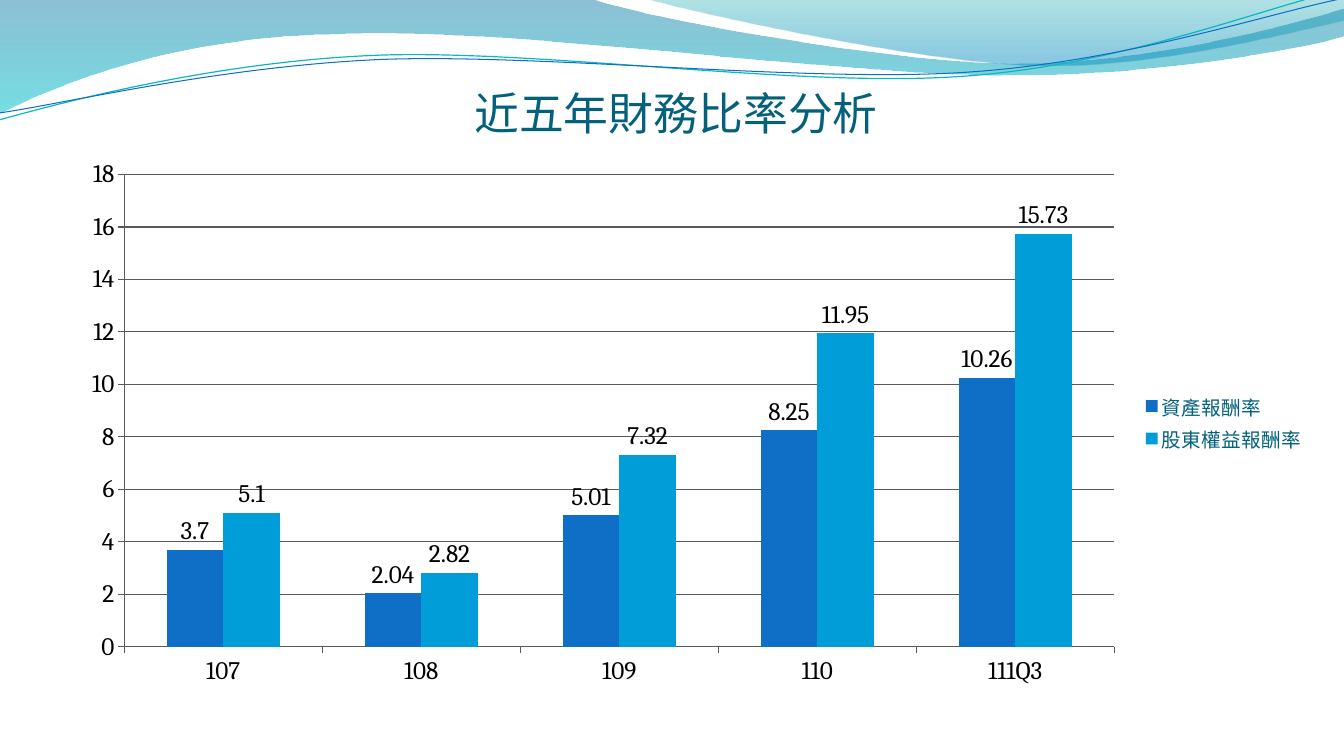
from dataclasses import dataclass
from math import cos, radians, sin

from lxml.etree import SubElement
from pptx import Presentation
from pptx.chart.data import CategoryChartData
from pptx.dml.color import RGBColor
from pptx.enum.chart import XL_CHART_TYPE, XL_LABEL_POSITION, XL_LEGEND_POSITION, XL_TICK_MARK
from pptx.enum.text import MSO_ANCHOR, PP_ALIGN
from pptx.oxml.ns import qn
from pptx.util import Pt


@dataclass(frozen=True)
class Theme:
    """Colours, fonts and type sizes of the slide."""
    heading: str = "04617B"
    ink: str = "000000"
    rule: str = "595959"
    teal_line: str = "0AB8BF"
    blue: str = "0F6FC6"
    sky: str = "009DD9"
    long_wave: tuple = ((0, "0074A1", 45), (1, "00C6CF", 55))
    short_wave: tuple = ((0, "00A1A9", 30), (0.8, "008BBF", 45))
    latin_font: str = "Cambria"
    chinese_font: str = "Noto Sans CJK SC"
    title_size: int = 32
    label_size: int = 18
    legend_size: int = 14


THEME = Theme()
CURVE_TILT = 357.3

LONG_WAVE = [
    (0, 0), (422.6, -0.7),
    (456.5, 12.2, 637.2, 45.4, 727.9, 45.4), (819.4, 45.4, 920.2, 18.7, 959.8, 6.5),
    (961.2, 25.9),
    (943.9, 31.7, 835.2, 54.7, 715.7, 54), (596.9, 54, 366.5, 20.2, 247, 24.5),
    (123.8, 25.9, 43.9, 59.8, -0.7, 81.4), (0, 0),
]
SHORT_WAVE = [
    (460.1, -0.7),
    (488.9, 7.9, 654.5, 44.6, 738, 46.8), (821.5, 49.7, 923, 23, 959.8, 15.1),
    (959.8, 0), (460.1, -0.7),
]
TEAL_CURVE = [
    (-0.7, 85.7),
    (46.1, 72.7, 151.9, 44.6, 265.7, 39.6), (379.4, 34.6, 568.8, 62.6, 684, 54.7),
    (799.2, 47.5, 901.4, 5.8, 958.3, -7.2),
]
BLUE_CURVE = [
    (0, 80.6),
    (45.4, 74.2, 157, 47.5, 272.2, 42.5), (386.6, 38.2, 573.1, 59, 687.6, 51.8),
    (802.8, 44.6, 903.6, 10.1, 960.5, -1.4),
]

YEARS = ["107", "108", "109", "110", "111Q3"]
RATIOS = [
    ("資產報酬率", (3.7, 2.04, 5.01, 8.25, 10.26), THEME.blue),
    ("股東權益報酬率", (5.1, 2.82, 7.32, 11.95, 15.73), THEME.sky),
]


def rgb(code):
    """Turn a hex code into a colour."""
    return RGBColor.from_string(code)


def to_local(point, frame, tilt):
    """Turn a point on the page into one inside a tilted frame."""
    left, top, width, height = frame
    dx, dy = point[0] - left - width / 2, point[1] - top - height / 2
    turn = radians(-tilt)
    return (Pt(dx * cos(turn) - dy * sin(turn) + width / 2),
            Pt(dx * sin(turn) + dy * cos(turn) + height / 2))


def add_outline(page, outline, frame, tilt=0, close=False):
    """Draw an outline of straight pieces and cubic curves in a frame."""
    pieces = [[to_local(piece[i:i + 2], frame, tilt) for i in range(0, len(piece), 2)]
              for piece in outline]
    builder = page.shapes.build_freeform(*pieces[0][0], scale=1.0)
    builder.add_line_segments([piece[-1] for piece in pieces[1:]], close=close)
    shape = builder.convert_to_shape()
    shape.left, shape.top, shape.width, shape.height = map(Pt, frame)
    shape.rotation = tilt
    shape.shadow.inherit = False
    route = next(shape._element.spPr.iter(qn("a:path")))
    route.set("w", str(shape.width))
    route.set("h", str(shape.height))
    for step, piece in zip(list(route), pieces):
        for old in list(step):
            step.remove(old)
        if len(piece) == 3:
            step.tag = qn("a:cubicBezTo")
        for x, y in piece:
            SubElement(step, qn("a:pt"), x=str(x), y=str(y))
    return shape


def add_wave(page, outline, frame, stops):
    """Draw a translucent wave shaded from top to bottom."""
    wave = add_outline(page, outline, frame, close=True)
    wave.line.fill.background()
    wave.fill.gradient()
    wave.fill.gradient_angle = 270
    for stop, (position, color, _) in zip(wave.fill.gradient_stops, stops):
        stop.position = position
        stop.color.rgb = rgb(color)
    tints = wave._element.spPr.find(qn("a:gradFill")).iter(qn("a:srgbClr"))
    for tint, (_, _, opacity) in zip(tints, stops):
        SubElement(tint, qn("a:alpha")).set("val", str(opacity * 1000))


def add_curve(page, outline, frame, color, width):
    """Draw a thin open curve."""
    curve = add_outline(page, outline, frame, CURVE_TILT)
    curve.fill.background()
    curve.line.color.rgb = rgb(color)
    curve.line.width = Pt(width)


def style_font(font, name, size, color):
    """Set typeface, size and colour, for Chinese text too."""
    font.name = name
    font.size = Pt(size)
    font.color.rgb = rgb(color)
    font.bold = False
    SubElement(font._element, qn("a:ea")).set("typeface", name)


def add_title(page, text):
    """Add the centred heading."""
    box = page.shapes.add_textbox(Pt(132), Pt(55.4), Pt(702), Pt(43.9))
    frame = box.text_frame
    frame.word_wrap = True
    frame.vertical_anchor = MSO_ANCHOR.BOTTOM
    frame.margin_left = frame.margin_right = frame.margin_bottom = 0
    frame.margin_top = Pt(3.6)
    para = frame.paragraphs[0]
    para.alignment = PP_ALIGN.CENTER
    span = para.add_run()
    span.text = text
    style_font(span.font, THEME.chinese_font, THEME.title_size, THEME.heading)


def place_plot(chart, **percents):
    """Fix the inner plot area in percent of the chart."""
    area = chart._chartSpace.chart.plotArea
    for old in area.findall(qn("c:layout")):
        area.remove(old)
    layout = area.makeelement(qn("c:layout"))
    area.insert(0, layout)
    manual = SubElement(layout, qn("c:manualLayout"))
    settings = {"layoutTarget": "inner", "xMode": "edge", "yMode": "edge"}
    settings.update((name, percent / 100) for name, percent in percents.items())
    for name, value in settings.items():
        SubElement(manual, qn(f"c:{name}")).set("val", str(value))


def style_axis(axis):
    """Give an axis thin rules and outside ticks."""
    axis.major_tick_mark = XL_TICK_MARK.OUTSIDE
    axis.minor_tick_mark = XL_TICK_MARK.NONE
    axis.format.line.color.rgb = rgb(THEME.rule)
    axis.format.line.width = Pt(0.75)


def add_ratio_chart(page):
    """Add the clustered columns of the financial ratios."""
    data = CategoryChartData()
    data.categories = YEARS
    for name, values, _ in RATIOS:
        data.add_series(name, values)
    chart = page.shapes.add_chart(
        XL_CHART_TYPE.COLUMN_CLUSTERED, Pt(48.2), Pt(105.8), Pt(892.1), Pt(391.7), data).chart
    style_font(chart.font, THEME.latin_font, THEME.label_size, THEME.ink)
    chart.has_title = False
    chart.has_legend = True
    chart.legend.position = XL_LEGEND_POSITION.RIGHT
    chart.legend.include_in_layout = False
    style_font(chart.legend.font, THEME.chinese_font, THEME.legend_size, THEME.heading)
    style_axis(chart.category_axis)
    scale = chart.value_axis
    style_axis(scale)
    scale.minimum_scale, scale.maximum_scale, scale.major_unit = 0, 18, 2
    scale.has_major_gridlines = True
    scale.major_gridlines.format.line.color.rgb = rgb(THEME.rule)
    scale.major_gridlines.format.line.width = Pt(0.75)
    plot = chart.plots[0]
    plot.gap_width, plot.overlap = 150, 0
    plot.vary_by_categories = False
    for series, (_, _, color) in zip(plot.series, RATIOS):
        series.format.fill.solid()
        series.format.fill.fore_color.rgb = rgb(color)
        labels = series.data_labels
        labels.show_value = True
        labels.position = XL_LABEL_POSITION.OUTSIDE_END
    place_plot(chart, x=4.55, y=4.83, w=79.27, h=86.14)


def main():
    """Build and save the slide."""
    deck = Presentation()
    deck.slide_width, deck.slide_height = Pt(960), Pt(540)
    page = deck.slides.add_slide(deck.slide_layouts[6])
    add_wave(page, LONG_WAVE, (-0.7, -0.7, 961.9, 82.1), THEME.long_wave)
    add_wave(page, SHORT_WAVE, (460.1, -0.7, 499.7, 50.4), THEME.short_wave)
    add_curve(page, TEAL_CURVE, (-2.2, 15.8, 961.9, 51.1), THEME.teal_line, 0.85)
    add_curve(page, BLUE_CURVE, (-1.4, 21.6, 963.4, 41.8), THEME.blue, 0.75)
    add_title(page, "近五年財務比率分析")
    add_ratio_chart(page)
    deck.save("out.pptx")


if __name__ == "__main__":
    main()
